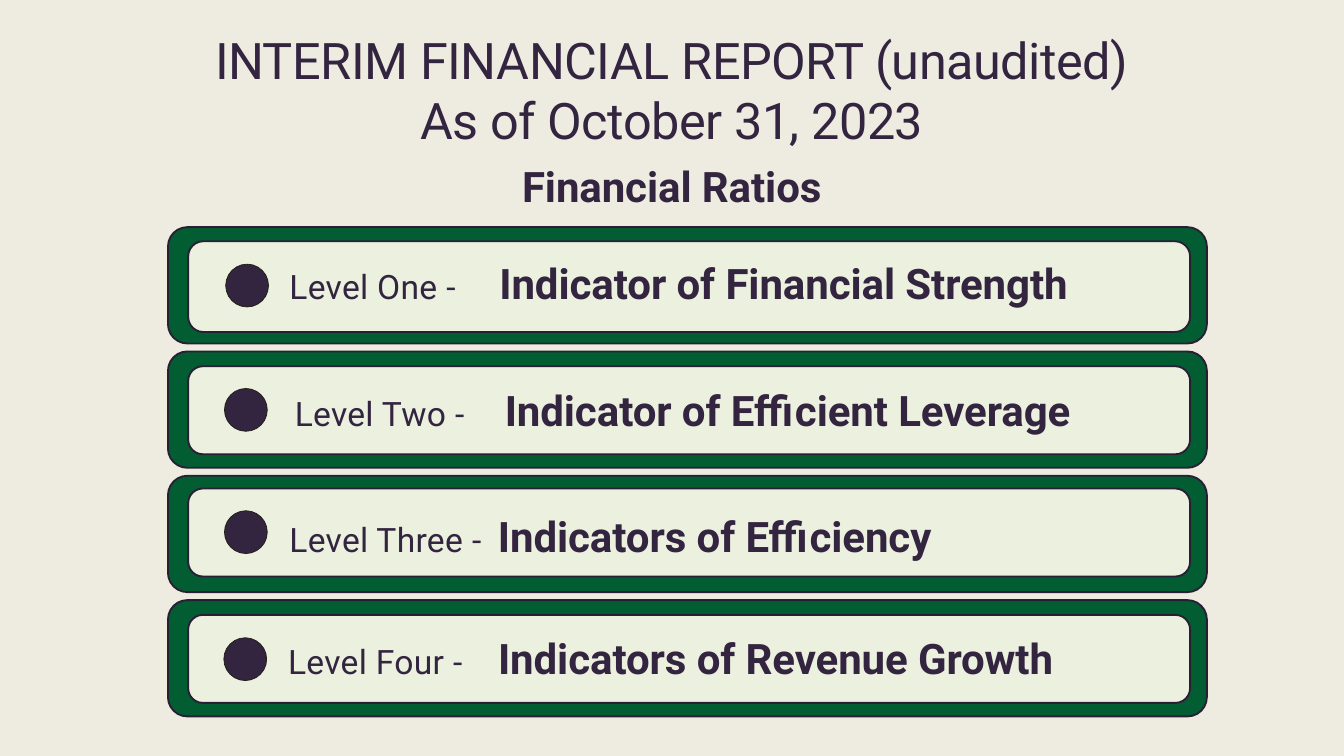
from dataclasses import dataclass
from pptx import Presentation
from pptx import util as u
from pptx.dml.color import RGBColor
from pptx.enum import shapes, text

Pt = u.Pt


@dataclass
class Theme:
    back: str = "EEECE1"
    green: str = "025E32"
    pale: str = "EBF1DE"
    edge: str = "291F35"
    ink: str = "332440"
    rim: str = "1E1C11"
    face: str = "Roboto"
    head: int = 54
    strong: int = 45
    level: int = 36


theme = Theme()
deck = Presentation()
deck.slide_width, deck.slide_height = Pt(1440), Pt(810)
slide = deck.slides.add_slide(deck.slide_layouts[6])
slide.background.fill.solid()
slide.background.fill.fore_color.rgb = RGBColor.from_string(theme.back)


def draw(kind, box, fill, line, width):
    shape = slide.shapes.add_shape(kind, *map(Pt, box))
    shape.shadow.inherit = False
    shape.fill.solid()
    shape.fill.fore_color.rgb = RGBColor.from_string(fill)
    shape.line.color.rgb = RGBColor.from_string(line)
    shape.line.width = Pt(width)


def write(box, paras, frame, form):
    body = slide.shapes.add_textbox(*map(Pt, box)).text_frame
    for name, value in frame.items():
        setattr(body, name, value)
    for num, (before, runs) in enumerate(paras):
        para = body.add_paragraph() if num else body.paragraphs[0]
        para.space_before = Pt(before)
        for name, value in form.items():
            setattr(para, name, value)
        for words, size, bold, space in runs:
            for part, line in enumerate(words.split("\n")):
                if part:
                    para.add_line_break()
                run = para.add_run()
                run.text = line
                look = {"name": theme.face, "size": Pt(size), "bold": bold}
                for name, value in look.items():
                    setattr(run.font, name, value)
                run.font.color.rgb = RGBColor.from_string(theme.ink)
                run._r.get_or_add_rPr().set("spc", str(space))


rows = [
    ("Level One ", "- \t ", "Indicator of Financial Strength",
     (258.5, 97.2), (241.8, 283), (303.1, 272.9, 960.5)),
    ("Level Two ", "- \t ", "Indicator of Efficient Leverage",
     (392.4, 94.3), (240.5, 416.2), (308.9, 408.2, 890.6)),
    ("Level Three ", "-  ", "Indicators of Efficiency",
     (523.4, 94.3), (240.5, 547.2), (303.1, 543.6, 972)),
    ("Level Four ", "- \t ", "Indicators of Revenue Growth",
     (658.8, 94.3), (239.8, 683.3), (301.7, 673.9, 961.9)),
]
round_box = shapes.MSO_SHAPE.ROUNDED_RECTANGLE
fit = {"word_wrap": True, "auto_size": text.MSO_AUTO_SIZE.SHAPE_TO_FIT_TEXT}

write((180, 29.5, 1079.3, 197.3),
      [(1, [("INTERIM FINANCIAL REPORT (unaudited)\nAs of October 31, 2023",
             theme.head, False, -50)]),
       (11, [("Financial Ratios", theme.strong, True, -10)])],
      {"word_wrap": True, "vertical_anchor": text.MSO_ANCHOR.MIDDLE,
       "margin_left": 0, "margin_right": 0, "margin_top": Pt(0.7),
       "margin_bottom": 0},
      {"alignment": text.PP_ALIGN.CENTER})

for num, (level, dash, label, panel, dot, spot) in enumerate(rows):
    top, high = panel
    draw(round_box, (180, 243.4 + 133.2 * num, 1113.1, 124.6),
         theme.green, theme.edge, 2)
    draw(round_box, (201.6, top, 1073.5, high), theme.pale, theme.edge, 2)
    draw(shapes.MSO_SHAPE.OVAL, (*dot, 45.9, 45.9), theme.ink, theme.rim, 0.75)
    write((*spot, 61.9),
          [(5.8, [(level, theme.level, False, 30),
                  (dash, theme.level, False, 0),
                  (label, theme.strong, True, -10)])],
          fit, {"alignment": text.PP_ALIGN.LEFT})

deck.save("out.pptx")
